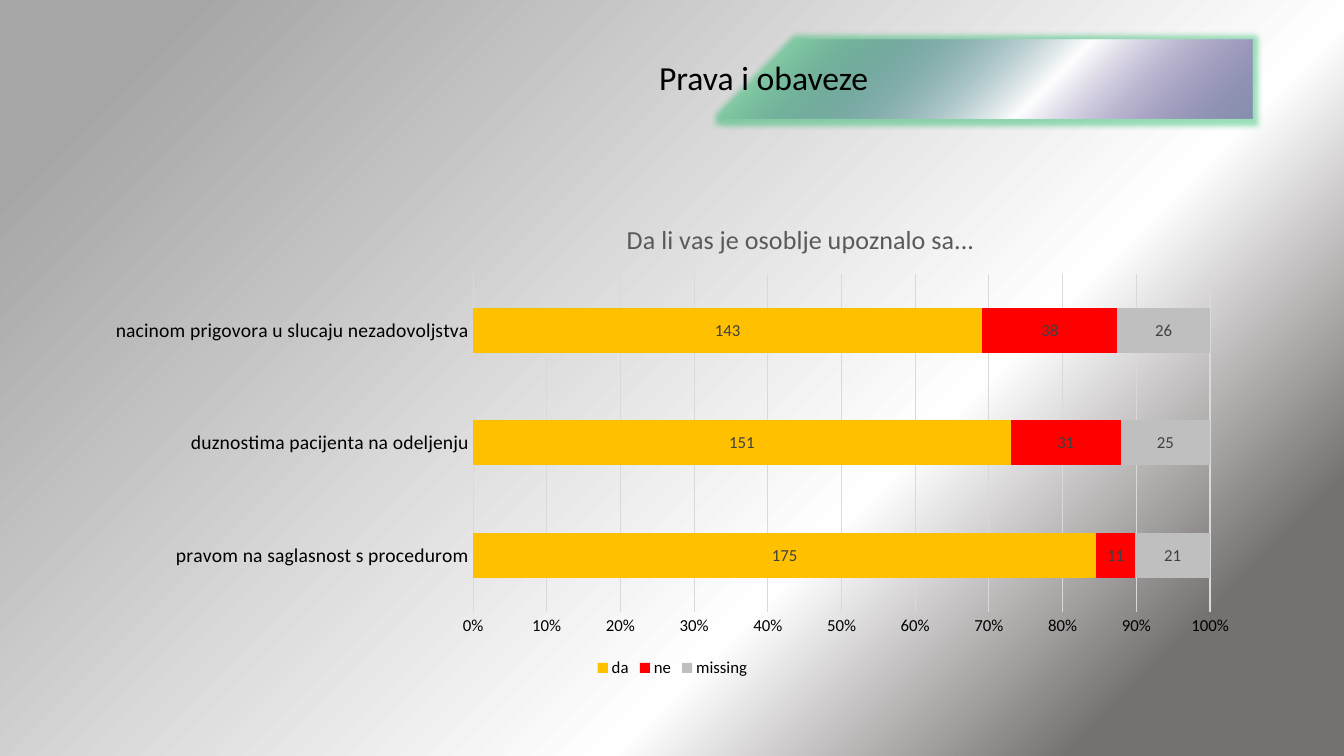
"""Build the patient rights and duties slide with its stacked bar chart."""
from lxml.etree import SubElement
from pptx import Presentation
from pptx.chart.data import CategoryChartData
from pptx.dml.color import RGBColor
from pptx.enum.chart import (
    XL_CHART_TYPE as ChartType,
    XL_LABEL_POSITION as LabelPosition,
    XL_LEGEND_POSITION as LegendPosition,
    XL_TICK_MARK as TickMark,
)
from pptx.enum.text import MSO_ANCHOR, PP_ALIGN
from pptx.oxml import parse_xml
from pptx.oxml.ns import nsdecls, qn
from pptx.util import Pt

PX = 9072
FONT = "Calibri"
COLORS = {
    "text": "000000", "label": "404040", "heading": "595959", "grid": "D9D9D9",
    "da": "FFC000", "ne": "FF0000", "missing": "BFBFBF",
    "dark": "767171", "white": "FFFFFF", "silver": "A6A6A6",
    "purple": "7030A0", "navy": "002060", "glow": "00B050",
}
SLIDE_SIZE = (1344, 756)
TITLE = "Prava i obaveze"
TITLE_BOX = (649, 40, 603, 79)
CHART_TITLE = "Da li vas je osoblje upoznalo sa..."
CHART_BOX = (93, 202, 1159, 480)
CHART_TITLE_AT = (622, 217)
PLOT_BOX = (473, 274, 737, 338)
CATEGORIES = [
    "pravom na saglasnost s procedurom",
    "duznostima pacijenta na odeljenju",
    "nacinom prigovora u slucaju nezadovoljstva",
]
SERIES = {"da": (175, 151, 143), "ne": (11, 31, 38), "missing": (21, 25, 26)}
BACKGROUND_STOPS = [(13, "dark", 100), (35, "white", 100), (91, "silver", 100)]
TITLE_STOPS = [(0, "purple", 45), (35, "white", 100), (78, "navy", 0)]


def rgb(name):
    return RGBColor.from_string(COLORS[name])


def emu(box):
    return [length * PX for length in box]


def format_font(font, size, color="text"):
    font.name, font.size, font.bold = FONT, Pt(size), False
    font.color.rgb = rgb(color)


def write_text(frame, text, size, color="text", align=None, spacing=None):
    paragraph = frame.paragraphs[0]
    paragraph.alignment, paragraph.line_spacing = align, spacing
    run = paragraph.add_run()
    run.text = text
    format_font(run.font, size, color)


def add_color(parent, name, opacity):
    color = SubElement(parent, qn("a:srgbClr"), val=COLORS[name])
    if opacity < 100:
        SubElement(color, qn("a:alpha"), val=str(opacity * 1000))


def corner_gradient(fill, owner, stops):
    fill.gradient()
    gradient = owner.find(".//" + qn("a:gradFill"))
    for child in list(gradient):
        gradient.remove(child)
    stop_list = SubElement(gradient, qn("a:gsLst"))
    for position, name, opacity in stops:
        stop = SubElement(stop_list, qn("a:gs"), pos=str(position * 1000))
        add_color(stop, name, opacity)
    path = SubElement(gradient, qn("a:path"), path="circle")
    SubElement(path, qn("a:fillToRect"), l="100000", t="100000")
    SubElement(gradient, qn("a:tileRect"), r="-100000", b="-100000")


def place_in_chart(parent, after, left, top, width=None, height=None):
    chart_left, chart_top, chart_width, chart_height = CHART_BOX
    values = {"x": (left - chart_left) / chart_width, "y": (top - chart_top) / chart_height}
    if width:
        values |= {"w": width / chart_width, "h": height / chart_height}
    modes = '<c:layoutTarget val="inner"/>' if width else ""
    modes += '<c:xMode val="edge"/><c:yMode val="edge"/>'
    sizes = "".join(f'<c:{key} val="{value:.4f}"/>' for key, value in values.items())
    layout = parse_xml(
        f'<c:layout {nsdecls("c")}><c:manualLayout>{modes}{sizes}</c:manualLayout></c:layout>'
    )
    for old in parent.findall(qn("c:layout")):
        parent.remove(old)
    if after is None:
        parent.insert(0, layout)
    else:
        after.addnext(layout)


def add_title(slide):
    title = slide.shapes.title
    title.left, title.top, title.width, title.height = emu(TITLE_BOX)
    corner_gradient(title.fill, title.element, TITLE_STOPS)
    title.shadow.inherit = False
    effects = title.element.find(".//" + qn("a:effectLst"))
    add_color(SubElement(effects, qn("a:glow"), rad=str(Pt(8))), "glow", 40)
    title.text_frame.vertical_anchor = MSO_ANCHOR.MIDDLE
    write_text(title.text_frame, TITLE, 24, align=PP_ALIGN.LEFT, spacing=0.9)


def format_axes(chart):
    for axis, size in ((chart.category_axis, 14), (chart.value_axis, 12)):
        axis.major_tick_mark = axis.minor_tick_mark = TickMark.NONE
        format_font(axis.tick_labels.font, size)
    value_axis = chart.value_axis
    value_axis.has_major_gridlines = True
    value_axis.tick_labels.number_format = "0%"
    value_axis.tick_labels.number_format_is_linked = False
    value_axis.format.line.fill.background()
    for line in (chart.category_axis.format.line, value_axis.major_gridlines.format.line):
        line.color.rgb, line.width = rgb("grid"), Pt(0.75)


def add_bar_chart(slide):
    data = CategoryChartData()
    data.categories = CATEGORIES
    for name, values in SERIES.items():
        data.add_series(name, values)
    chart = slide.shapes.add_chart(ChartType.BAR_STACKED_100, *emu(CHART_BOX), data).chart
    format_font(chart.font, 10)
    chart.has_title = True
    write_text(chart.chart_title.text_frame, CHART_TITLE, 18.6, "heading")
    chart.chart_title.include_in_layout = False
    title = chart.chart_title.format and chart.element.find(".//" + qn("c:title"))
    place_in_chart(title, title.find(qn("c:tx")), *CHART_TITLE_AT)
    place_in_chart(chart.element.find(".//" + qn("c:plotArea")), None, *PLOT_BOX)
    format_axes(chart)
    chart.has_legend = True
    chart.legend.position = LegendPosition.BOTTOM
    chart.legend.include_in_layout = False
    format_font(chart.legend.font, 12)
    plot = chart.plots[0]
    plot.gap_width, plot.overlap, plot.vary_by_categories = 150, 100, False
    for series in plot.series:
        series.format.fill.solid()
        series.format.fill.fore_color.rgb = rgb(series.name)
        labels = series.data_labels
        labels.show_value, labels.position = True, LabelPosition.CENTER
        format_font(labels.font, 12, "label")


def main():
    presentation = Presentation()
    presentation.slide_width, presentation.slide_height = emu(SLIDE_SIZE)
    slide = presentation.slides.add_slide(presentation.slide_layouts[5])
    corner_gradient(slide.background.fill, slide.element, BACKGROUND_STOPS)
    add_title(slide)
    add_bar_chart(slide)
    presentation.save("out.pptx")


if __name__ == "__main__":
    main()
